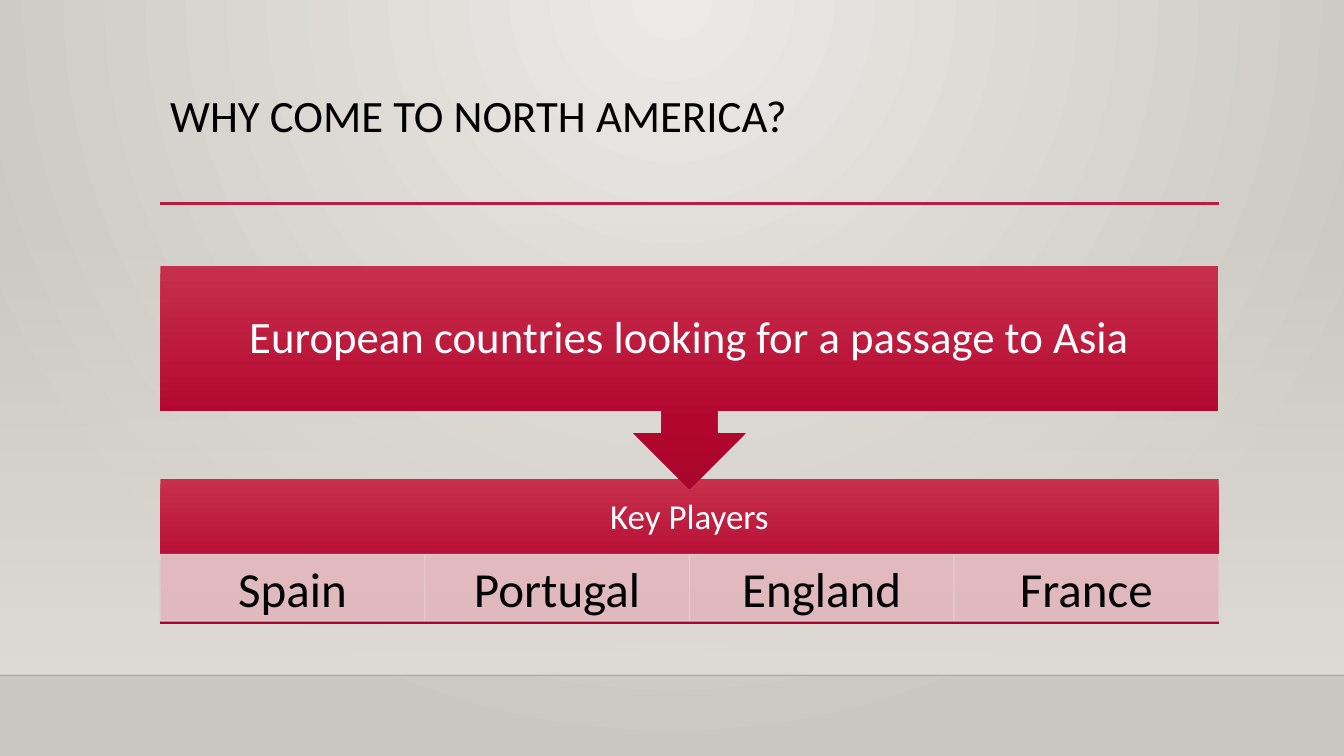
"""Builds the slide on why Europeans came to North America."""
import pptx
import pptx.dml.color
import pptx.enum.shapes
import pptx.enum.text
import pptx.oxml
import pptx.oxml.ns
import pptx.util

Cm = pptx.util.Cm
Pt = pptx.util.Pt
RGBColor = pptx.dml.color.RGBColor
SHAPE = pptx.enum.shapes.MSO_SHAPE
ALIGN = pptx.enum.text.PP_ALIGN
ANCHOR = pptx.enum.text.MSO_ANCHOR
qn = pptx.oxml.ns.qn

TITLE = "WHY COME TO NORTH AMERICA?"
REASON = "European countries looking for a passage to Asia"
PLAYERS_HEADING = "Key Players"
PLAYERS = ["Spain", "Portugal", "England", "France"]

FONT = "Calibri"
BLACK = RGBColor(0x00, 0x00, 0x00)
WHITE = RGBColor(0xFF, 0xFF, 0xFF)
RULE_RED = RGBColor(0xB7, 0x1E, 0x42)
PALE_PINK = RGBColor(0xE6, 0xCD, 0xCF)
WALL = RGBColor(0xDF, 0xDB, 0xD5)
BACKDROP_STOPS = [(0, RGBColor(0xEC, 0xEA, 0xE7), 100), (100, RGBColor(0xCA, 0xC7, 0xC1), 100)]
WALL_STOPS = [(0, WALL, 0), (100, WALL, 100)]
RED_STOPS = [
    (0, RGBColor(0xC7, 0x30, 0x4C), 100),
    (69, RGBColor(0xB3, 0x06, 0x2F), 100),
    (100, RGBColor(0xAA, 0x06, 0x2C), 100),
]
DOWNWARD = '<a:lin {} ang="5400000" scaled="0"/>'
FROM_TOP = '<a:path {} path="circle"><a:fillToRect l="43000" t="0" r="43000" b="100000"/></a:path>'

SLIDE_WIDTH, SLIDE_HEIGHT = 33.87, 19.05
LEFT, WIDTH = 4.04, 26.67
FLOOR_TOP = 17.02
WALL_TOP = 5.61
RULE_TOP = 5.13
PANEL_TOP, PANEL_HEIGHT = 12.07, 3.66
HEADING_HEIGHT = 1.98
CELL_TOP, CELL_HEIGHT = 13.97, 1.68


def parse(xml):
    return pptx.oxml.parse_xml(xml.format(pptx.oxml.ns.nsdecls("a")))


def set_gradient(fill, element, stops, direction):
    fill.gradient()
    gradient = element.find(".//" + qn("a:gradFill"))
    for child in list(gradient):
        gradient.remove(child)
    marks = "".join(
        f'<a:gs pos="{position * 1000}"><a:srgbClr val="{color}">'
        f'<a:alpha val="{opacity * 1000}"/></a:srgbClr></a:gs>'
        for position, color, opacity in stops
    )
    gradient.append(parse("<a:gsLst {}>" + marks + "</a:gsLst>"))
    gradient.append(parse(direction))


def set_opacity(element, percent):
    for color in element.iter(qn("a:srgbClr")):
        color.append(parse(f'<a:alpha {{}} val="{percent * 1000}"/>'))


def add_block(slide, preset, left, top, width, height):
    shape = slide.shapes.add_shape(preset, Cm(left), Cm(top), Cm(width), Cm(height))
    shape.shadow.inherit = False
    shape.line.fill.background()
    return shape


def add_rule(slide, left, right, top, color, weight):
    rule = slide.shapes.add_connector(
        pptx.enum.shapes.MSO_CONNECTOR.STRAIGHT, Cm(left), Cm(top), Cm(right), Cm(top))
    rule.line.color.rgb = color
    rule.line.width = Pt(weight)
    rule.element.spPr.append(parse("<a:effectLst {}/>"))
    return rule


def write(shape, text, size, color, insets, spacing=0.9, align=ALIGN.CENTER, anchor=ANCHOR.MIDDLE):
    frame = shape.text_frame
    frame.text = text
    frame.word_wrap = True
    frame.vertical_anchor = anchor
    frame.margin_left, frame.margin_top, frame.margin_right, frame.margin_bottom = map(Cm, insets)
    paragraph = frame.paragraphs[0]
    paragraph.alignment = align
    paragraph.line_spacing = spacing
    font = paragraph.runs[0].font
    font.name, font.size = FONT, Pt(size)
    font.color.rgb = color


def main():
    presentation = pptx.Presentation()
    presentation.slide_width = Cm(SLIDE_WIDTH)
    presentation.slide_height = Cm(SLIDE_HEIGHT)
    slide = presentation.slides.add_slide(presentation.slide_layouts[6])
    set_gradient(slide.background.fill, slide.element, BACKDROP_STOPS, FROM_TOP)

    wall = add_block(slide, SHAPE.RECTANGLE, 0, WALL_TOP, SLIDE_WIDTH, FLOOR_TOP - WALL_TOP)
    set_gradient(wall.fill, wall.element, WALL_STOPS, DOWNWARD)
    floor_edge = add_rule(slide, 0, SLIDE_WIDTH, FLOOR_TOP, BLACK, 1)
    set_opacity(floor_edge.element, 20)
    add_rule(slide, LEFT, LEFT + WIDTH, RULE_TOP, RULE_RED, 2.5)

    title = slide.shapes.add_textbox(Cm(LEFT), Cm(2.24), Cm(WIDTH), Cm(2.92))
    write(title, TITLE, 32, BLACK, (0.25, 0.13, 0.25, 0.13), align=ALIGN.LEFT, anchor=ANCHOR.TOP)

    panel = add_block(slide, SHAPE.RECTANGLE, LEFT, PANEL_TOP, WIDTH, PANEL_HEIGHT)
    set_gradient(panel.fill, panel.element, RED_STOPS, DOWNWARD)
    below_heading = PANEL_HEIGHT - HEADING_HEIGHT
    write(panel, PLAYERS_HEADING, 25, WHITE, (0.48, 0.48, 0.48, 0.48 + below_heading))

    cell_width = WIDTH / len(PLAYERS)
    for index, player in enumerate(PLAYERS):
        cell = add_block(slide, SHAPE.RECTANGLE, LEFT + index * cell_width, CELL_TOP,
                         cell_width, CELL_HEIGHT)
        cell.fill.solid()
        cell.fill.fore_color.rgb = PALE_PINK
        cell.line.color.rgb = PALE_PINK
        cell.line.width = Pt(0.75)
        set_opacity(cell.element.spPr, 90)
        write(cell, player, 35, BLACK, (0.69, 0.13, 0.69, 0.13), spacing=1.0)

    callout = add_block(slide, SHAPE.DOWN_ARROW_CALLOUT, LEFT, 6.71, WIDTH, 5.61)
    set_gradient(callout.fill, callout.element, RED_STOPS, DOWNWARD)
    write(callout, REASON, 32, WHITE, (0.64, 0.64, 0.64, 0.64))

    presentation.save("out.pptx")


if __name__ == "__main__":
    main()
